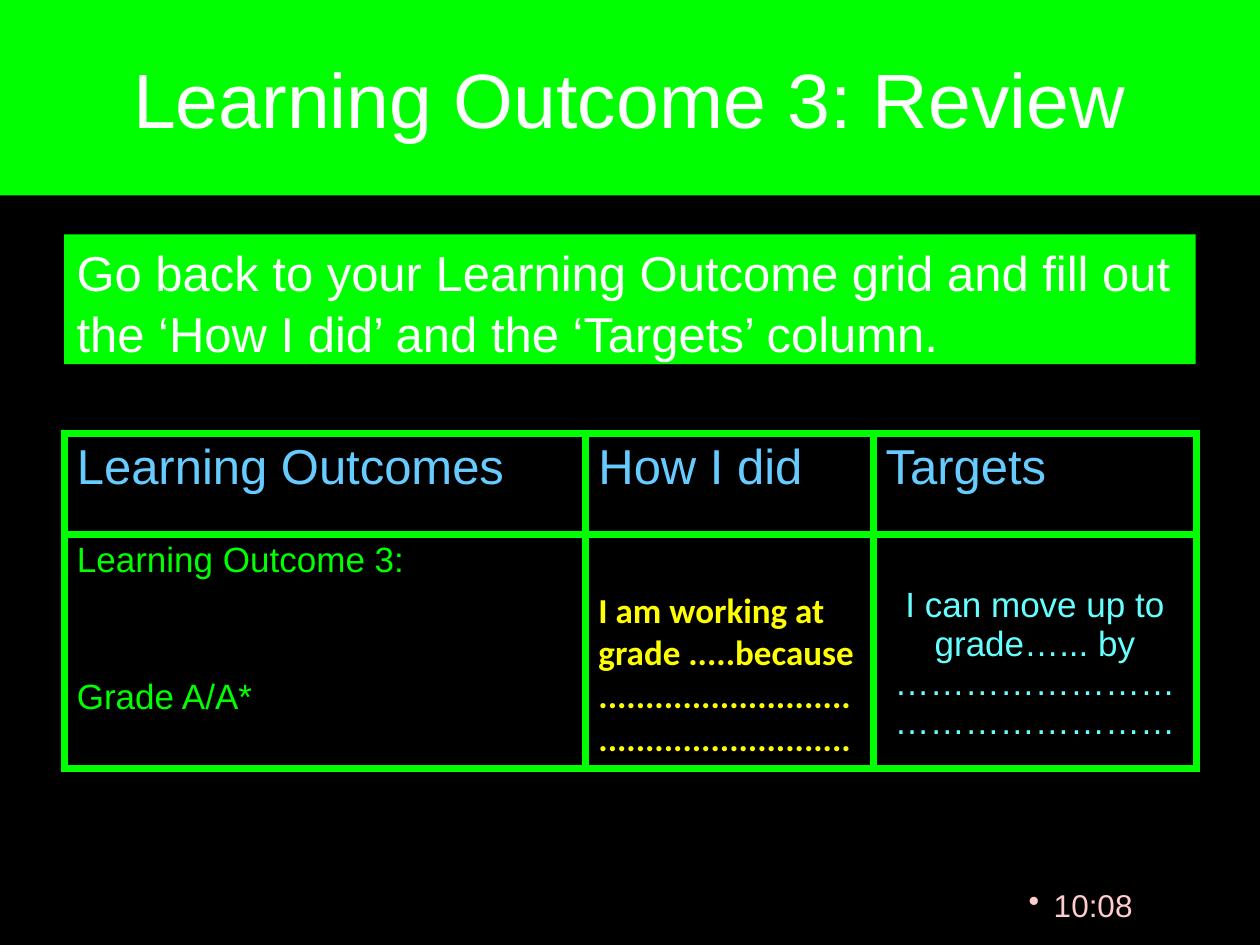
from lxml.etree import SubElement
from pptx import Presentation
from pptx.dml.color import RGBColor
from pptx.enum.shapes import MSO_SHAPE
from pptx.enum.text import MSO_ANCHOR, PP_ALIGN
from pptx.oxml import parse_xml
from pptx.oxml.ns import nsdecls, qn
from pptx.util import Inches, Pt

BLACK = RGBColor(0x00, 0x00, 0x00)
GREEN = RGBColor(0x00, 0xFF, 0x00)
WHITE = RGBColor(0xFF, 0xFF, 0xFF)
PINK = RGBColor(0xFF, 0xCC, 0xCC)
SKY = RGBColor(0x66, 0xCC, 0xFF)
CYAN = RGBColor(0x66, 0xFF, 0xFF)
YELLOW = RGBColor(0xFF, 0xFF, 0x00)


def write(p, text, size, color, font="Arial", bold=False, align=PP_ALIGN.LEFT):
    """Add one formatted run to a paragraph."""
    p.alignment = align
    r = p.add_run()
    r.text = text
    r.font.size, r.font.name, r.font.bold = Pt(size), font, bold
    r.font.color.rgb = color


def fill(target, color):
    """Give a shape, cell or background a solid fill."""
    target.fill.solid()
    target.fill.fore_color.rgb = color


def add_title(s, text):
    """Fill and place the title placeholder."""
    sp = s.shapes.title
    sp.left, sp.top, sp.width, sp.height = 0, 0, Inches(10), Inches(1.55)
    fill(sp, GREEN)
    sp.text_frame.vertical_anchor = MSO_ANCHOR.MIDDLE
    write(sp.text_frame.paragraphs[0], text, 44, WHITE, align=PP_ALIGN.CENTER)


def add_instruction(s, text):
    """Add the green instruction box."""
    sp = s.shapes.add_shape(MSO_SHAPE.RECTANGLE, Inches(0.51), Inches(1.86),
                            Inches(8.98), Inches(1.03))
    sp.shadow.inherit = False
    fill(sp, GREEN)
    sp.line.fill.background()
    tf = sp.text_frame
    tf.word_wrap = True
    tf.vertical_anchor = MSO_ANCHOR.TOP
    p = tf.paragraphs[0]
    p.line_spacing = 1.04
    write(p, text, 28, WHITE)


def add_clock(s, text):
    """Add the bulleted time in the corner."""
    tf = s.shapes.add_textbox(Inches(7.84), Inches(6.98), Inches(1.57), Inches(0.52)).text_frame
    tf.word_wrap = True
    tf.margin_left = 0
    p = tf.paragraphs[0]
    write(p, text, 18, PINK, align=PP_ALIGN.CENTER)
    pPr = p._p.get_or_add_pPr()
    pPr.set("marL", str(Inches(0.2)))
    pPr.set("indent", str(-Inches(0.2)))
    SubElement(pPr, qn("a:buChar")).set("char", "•")


def set_borders(cell, color, width):
    """Draw all four borders of a cell."""
    tcPr = cell._tc.get_or_add_tcPr()
    for i, side in enumerate("LRTB"):
        tcPr.insert(i, parse_xml(
            f'<a:ln{side} {nsdecls("a")} w="{Pt(width)}"><a:solidFill>'
            f'<a:srgbClr val="{color}"/></a:solidFill></a:ln{side}>'))


def add_grid(s):
    """Add the learning outcome table."""
    cols, rows = (4.14, 2.28, 2.57), (0.8, 1.86)
    tbl = s.shapes.add_table(2, 3, Inches(0.51), Inches(3.44),
                             Inches(sum(cols)), Inches(sum(rows))).table
    tbl.first_row = tbl.horz_banding = False
    for col, width in zip(tbl.columns, cols):
        col.width = Inches(width)
    for row, height in zip(tbl.rows, rows):
        row.height = Inches(height)
    for cell in tbl.iter_cells():
        fill(cell, BLACK)
        set_borders(cell, GREEN, 4.5)

    for i, head in enumerate(("Learning Outcomes", "How I did", "Targets")):
        write(tbl.cell(0, i).text_frame.paragraphs[0], head, 28, SKY)

    outcome, result, target = (tbl.cell(1, i) for i in range(3))
    write(outcome.text_frame.paragraphs[0], "Learning Outcome 3:", 20, GREEN)
    p = outcome.text_frame.add_paragraph()
    p.space_before = Pt(56)
    write(p, "Grade A/A*", 20, GREEN)
    result.margin_top = Inches(0.44)
    write(result.text_frame.paragraphs[0],
          "I am working at grade .....because " + "." * 54, 20, YELLOW, "Calibri", True)
    target.margin_top = Inches(0.41)
    write(target.text_frame.paragraphs[0],
          "I can move up to grade…... by …………………………………………", 20, CYAN,
          align=PP_ALIGN.CENTER)


def main():
    """Build and save the review slide."""
    prs = Presentation()
    prs.slide_width, prs.slide_height = Inches(10), Inches(7.5)
    s = prs.slides.add_slide(prs.slide_layouts[5])
    fill(s.background, BLACK)
    add_clock(s, "10:08")
    add_title(s, "Learning Outcome 3: Review")
    add_grid(s)
    add_instruction(s, "Go back to your Learning Outcome grid and fill out "
                       "the ‘How I did’ and the ‘Targets’ column.")
    prs.save("out.pptx")


if __name__ == "__main__":
    main()
